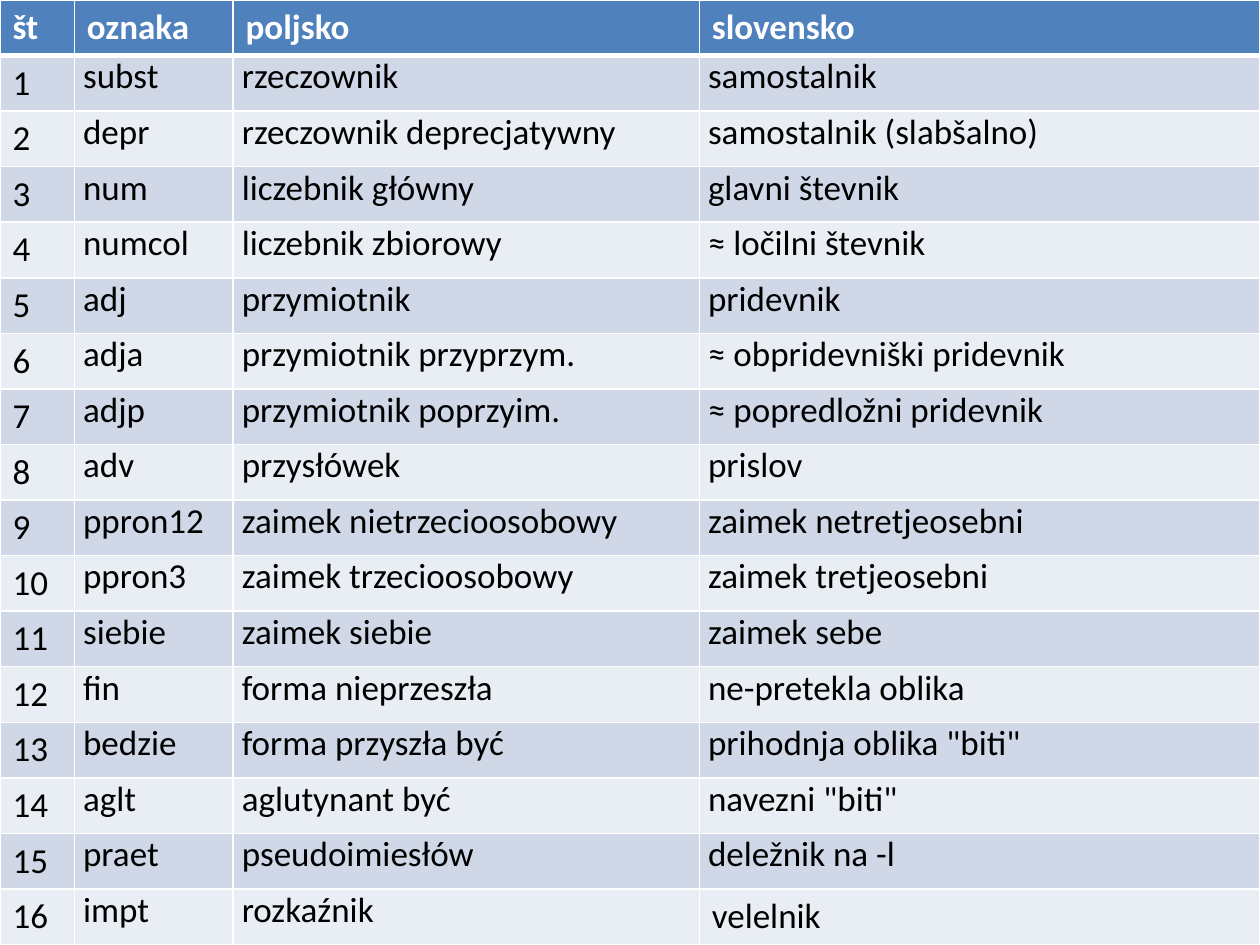
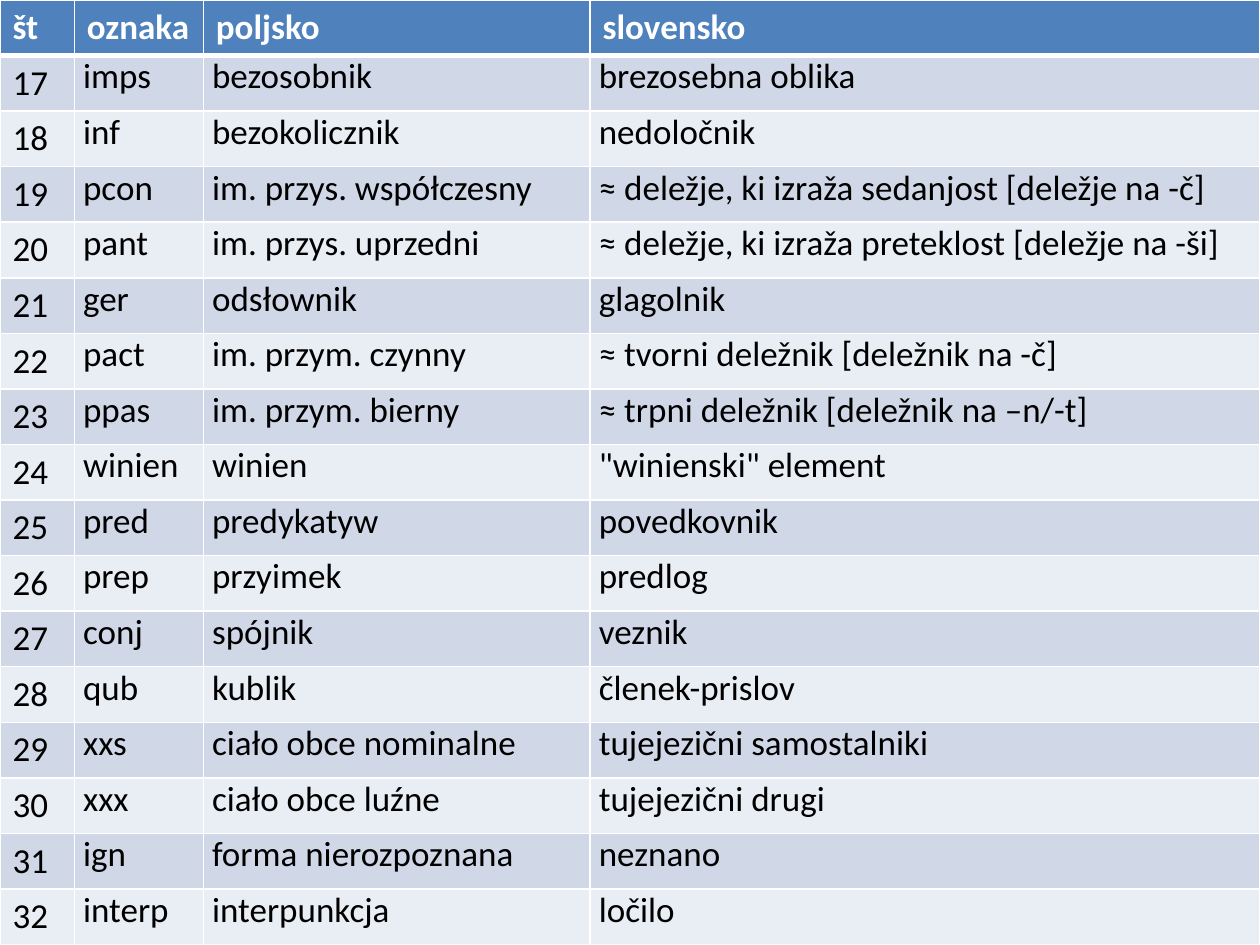
from lxml.etree import SubElement
from pptx import Presentation
from pptx.dml.color import RGBColor
from pptx.oxml.ns import qn
from pptx.util import Inches, Pt

FONT = "Calibri"
TEXT_SIZE = 20
WHITE, BLACK = "FFFFFF", "000000"
HEADER_BLUE = "4F81BD"
STRIPES = ("D0D8E8", "E9EDF4")
THIN, THICK = 1, 3
TIGHT_SIDE = 0.07
HEADINGS = ("št", "oznaka", "poljsko", "slovensko")

WORD_CLASSES = [
    ("subst", "rzeczownik", "samostalnik"),
    ("depr", "rzeczownik deprecjatywny", "samostalnik (slabšalno)"),
    ("num", "liczebnik główny", "glavni števnik"),
    ("numcol", "liczebnik zbiorowy", "≈ ločilni števnik"),
    ("adj", "przymiotnik", "pridevnik"),
    ("adja", "przymiotnik przyprzym.", "≈ obpridevniški pridevnik"),
    ("adjp", "przymiotnik poprzyim.", "≈ popredložni pridevnik"),
    ("adv", "przysłówek", "prislov"),
    ("ppron12", "zaimek nietrzecioosobowy", "zaimek netretjeosebni"),
    ("ppron3", "zaimek trzecioosobowy", "zaimek tretjeosebni"),
    ("siebie", "zaimek siebie", "zaimek sebe"),
    ("fin", "forma nieprzeszła", "ne-pretekla oblika"),
    ("bedzie", "forma przyszła być", 'prihodnja oblika "biti"'),
    ("aglt", "aglutynant być", 'navezni "biti"'),
    ("praet", "pseudoimiesłów", "deležnik na -l"),
    ("impt", "rozkaźnik", "velelnik"),
    ("imps", "bezosobnik", "brezosebna oblika"),
    ("inf", "bezokolicznik", "nedoločnik"),
    ("pcon", "im. przys. współczesny", "≈ deležje, ki izraža sedanjost [deležje na -č]"),
    ("pant", "im. przys. uprzedni", "≈ deležje, ki izraža preteklost [deležje na -ši]"),
    ("ger", "odsłownik", "glagolnik"),
    ("pact", "im. przym. czynny", "≈ tvorni deležnik [deležnik na -č]"),
    ("ppas", "im. przym. bierny", "≈ trpni deležnik [deležnik na –n/-t]"),
    ("winien", "winien", '"winienski" element'),
    ("pred", "predykatyw", "povedkovnik"),
    ("prep", "przyimek", "predlog"),
    ("conj", "spójnik", "veznik"),
    ("qub", "kublik", "členek-prislov"),
    ("xxs", "ciało obce nominalne", "tujejezični samostalniki"),
    ("xxx", "ciało obce luźne", "tujejezični drugi"),
    ("ign", "forma nierozpoznana", "neznano"),
    ("interp", "interpunkcja", "ločilo"),
]
CLASSES_PER_SLIDE = 16
COLUMN_PERCENTS = [(5.9, 12.6, 37, 44.5), (5.9, 10.24, 30.7, 53.16)]
ROOMY_CELLS = {"velelnik"}


def colour(hex_code):
    return RGBColor.from_string(hex_code)


def draw_borders(cell, top, bottom):
    properties = cell._tc.get_or_add_tcPr()
    for side, points in (("L", THIN), ("R", THIN), ("T", top), ("B", bottom)):
        border = SubElement(properties, qn(f"a:ln{side}"), w=str(Pt(points)))
        fill = SubElement(border, qn("a:solidFill"))
        SubElement(fill, qn("a:srgbClr"), val=WHITE)


def write_cell(cell, text, is_heading):
    run = cell.text_frame.paragraphs[0].add_run()
    run.text = text
    run.font.name = FONT
    run.font.size = Pt(TEXT_SIZE)
    run.font.bold = is_heading
    run.font.color.rgb = colour(WHITE if is_heading else BLACK)


def tighten(cell):
    cell.margin_left = cell.margin_right = Inches(TIGHT_SIDE)
    cell.margin_top = cell.margin_bottom = 0


def place_glossary(slide, box, column_percents, entries):
    left, top, width, height = box
    rows = [HEADINGS, *entries]
    glossary = slide.shapes.add_table(
        len(rows), len(HEADINGS), left, top, width, height
    ).table
    for column, percent in zip(glossary.columns, column_percents):
        column.width = round(width * percent / 100)
    for row_index, texts in enumerate(rows):
        is_heading = row_index == 0
        glossary.rows[row_index].height = height // len(rows)
        background = HEADER_BLUE if is_heading else STRIPES[(row_index - 1) % 2]
        for column_index, text in enumerate(texts):
            cell = glossary.cell(row_index, column_index)
            draw_borders(
                cell,
                top=THICK if row_index == 1 else THIN,
                bottom=THICK if is_heading else THIN,
            )
            cell.fill.solid()
            cell.fill.fore_color.rgb = colour(background)
            if not is_heading and column_index > 0 and text not in ROOMY_CELLS:
                tighten(cell)
            write_cell(cell, text, is_heading)


def main():
    deck = Presentation()
    deck.slide_width, deck.slide_height = Inches(10), Inches(7.5)
    blank_layout = deck.slide_layouts.get_by_name("Blank")
    whole_slide = (0, 0, deck.slide_width, deck.slide_height)
    numbered = [(str(n), *entry) for n, entry in enumerate(WORD_CLASSES, 1)]
    for page, column_percents in enumerate(COLUMN_PERCENTS):
        start = page * CLASSES_PER_SLIDE
        entries = numbered[start:start + CLASSES_PER_SLIDE]
        slide = deck.slides.add_slide(blank_layout)
        place_glossary(slide, whole_slide, column_percents, entries)
    deck.save("out.pptx")


if __name__ == "__main__":
    main()
